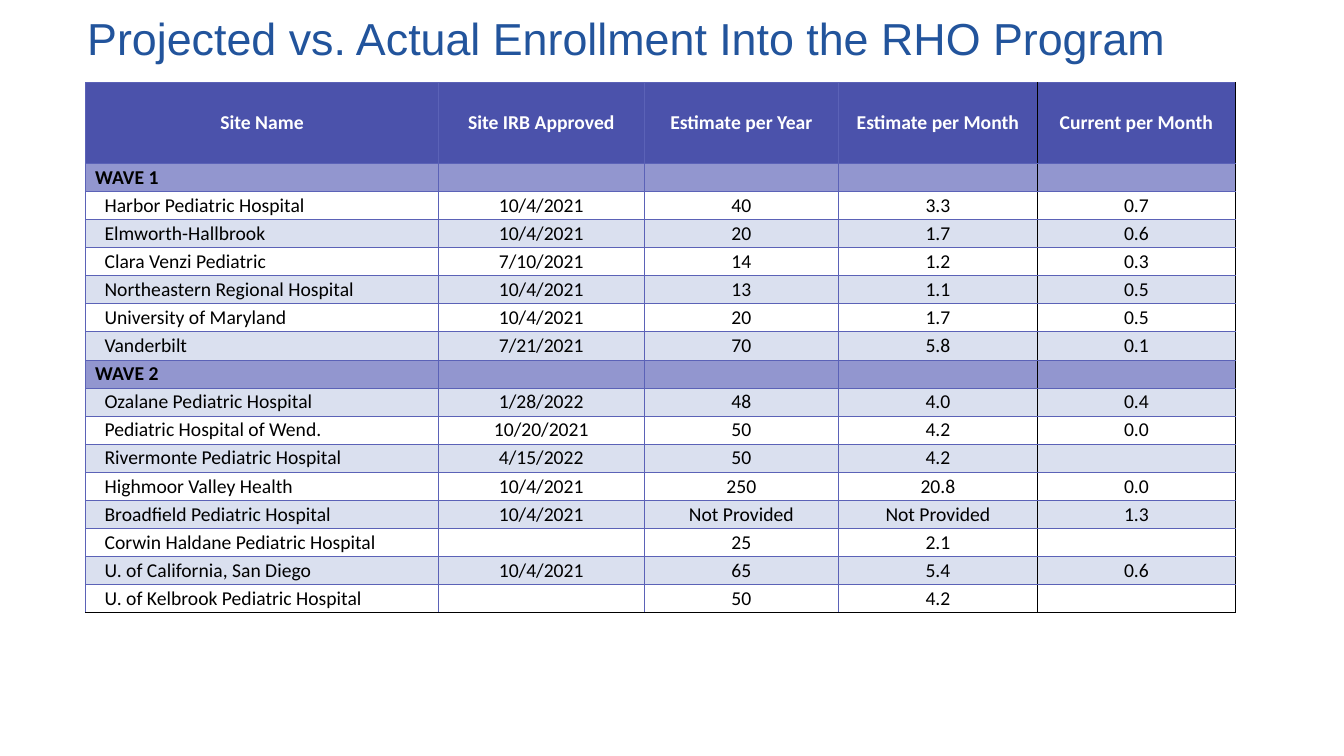
from lxml.etree import SubElement
from pptx import Presentation
from pptx.dml.color import RGBColor
from pptx.enum.text import MSO_ANCHOR, PP_ALIGN
from pptx.oxml.ns import qn
from pptx.util import Pt

BLUE = RGBColor(0x22, 0x54, 0x9C)
INDIGO = RGBColor(0x4B, 0x52, 0xAB)
LILAC = RGBColor(0x92, 0x96, 0xCF)
PALE = RGBColor(0xDA, 0xE0, 0xEF)
EDGE = RGBColor(0x5B, 0x62, 0xB7)
BLACK = RGBColor(0, 0, 0)
WHITE = RGBColor(255, 255, 255)

TITLE = "Projected vs. Actual Enrollment Into the RHO Program"
HEADS = ("Site Name", "Site IRB Approved", "Estimate per Year",
         "Estimate per Month", "Current per Month")
WAVES = {
    "WAVE 1": (
        ("Harbor Pediatric Hospital", "10/4/2021", "40", "3.3", "0.7"),
        ("Elmworth-Hallbrook", "10/4/2021", "20", "1.7", "0.6"),
        ("Clara Venzi Pediatric", "7/10/2021", "14", "1.2", "0.3"),
        ("Northeastern Regional Hospital", "10/4/2021", "13", "1.1", "0.5"),
        ("University of Maryland", "10/4/2021", "20", "1.7", "0.5"),
        ("Vanderbilt", "7/21/2021", "70", "5.8", "0.1"),
    ),
    "WAVE 2": (
        ("Ozalane Pediatric Hospital", "1/28/2022", "48", "4.0", "0.4"),
        ("Pediatric Hospital of Wend.", "10/20/2021", "50", "4.2", "0.0"),
        ("Rivermonte Pediatric Hospital", "4/15/2022", "50", "4.2", ""),
        ("Highmoor Valley Health", "10/4/2021", "250", "20.8", "0.0"),
        ("Broadfield Pediatric Hospital", "10/4/2021",
         "Not Provided", "Not Provided", "1.3"),
        ("Corwin Haldane Pediatric Hospital", "", "25", "2.1", ""),
        ("U. of California, San Diego", "10/4/2021", "65", "5.4", "0.6"),
        ("U. of Kelbrook Pediatric Hospital", "", "50", "4.2", ""),
    ),
}
WIDTHS = (252, 146.9, 139, 141.8, 141.8)
HEAD_H = 57.6
ROW_H = 20.07
SIZE = 14


def apply(item, **vals):
    for key, val in vals.items():
        setattr(item, key, val)


def write(para, text, color, **form):
    run = para.add_run()
    run.text = text
    apply(run.font, **form)
    run.font.color.rgb = color


def add_title(slide):
    box = slide.shapes.add_textbox(Pt(46.8), Pt(0), Pt(802), Pt(59))
    apply(box.text_frame, word_wrap=True, vertical_anchor=MSO_ANCHOR.MIDDLE)
    para = box.text_frame.paragraphs[0]
    apply(para, alignment=PP_ALIGN.CENTER, line_spacing=0.9)
    write(para, TITLE, BLUE, name="Arial", size=Pt(32))


def add_edges(cell, colors):
    props = cell._tc.get_or_add_tcPr()
    for side, color in colors.items():
        line = SubElement(props, qn(f"a:ln{side}"), w=str(Pt(0.5)))
        fill = SubElement(line, qn("a:solidFill"))
        SubElement(fill, qn("a:srgbClr"), val=str(color))


def fill_cell(cell, text, ink, fill, bold, left, center):
    apply(cell, margin_left=Pt(left), margin_right=0, margin_top=0,
          margin_bottom=0, vertical_anchor=MSO_ANCHOR.MIDDLE)
    para = cell.text_frame.paragraphs[0]
    para.alignment = PP_ALIGN.CENTER if center else PP_ALIGN.LEFT
    if text:
        write(para, text, ink, name="Calibri", size=Pt(SIZE), bold=bold)
    else:
        SubElement(para._p, qn("a:endParaRPr"), sz=str(SIZE * 100))
    if fill is None:
        cell.fill.background()
    else:
        cell.fill.solid()
        cell.fill.fore_color.rgb = fill


def add_grid(slide):
    rows = [HEADS]
    for wave, sites in WAVES.items():
        rows += [(wave, "", "", "", ""), *sites]
    last = len(rows) - 1
    frame = slide.shapes.add_table(
        len(rows), len(HEADS), Pt(61.2), Pt(59),
        Pt(sum(WIDTHS)), Pt(HEAD_H + ROW_H * last))
    table = frame.table
    apply(table, first_row=False, horz_banding=False)
    for col, width in zip(table.columns, WIDTHS):
        col.width = Pt(width)
    for r, row in enumerate(rows):
        head, wave = r == 0, row[0] in WAVES
        table.rows[r].height = Pt(HEAD_H if head else ROW_H)
        fill = INDIGO if head else LILAC if wave else PALE if r % 2 else None
        for c, text in enumerate(row):
            cell = table.cell(r, c)
            name = c == 0 and not head
            left = (6.75 if wave else 13.5) if name else 0
            add_edges(cell, {
                "L": BLACK if c == 4 else EDGE,
                "R": BLACK if c >= 3 else EDGE,
                "T": EDGE,
                "B": BLACK if r == last else EDGE,
            })
            fill_cell(cell, text, WHITE if head else BLACK, fill,
                      head or wave, left, not name)


def main():
    deck = Presentation()
    apply(deck, slide_width=Pt(960), slide_height=Pt(540))
    slide = deck.slides.add_slide(deck.slide_layouts[6])
    add_title(slide)
    add_grid(slide)
    deck.save("out.pptx")


if __name__ == "__main__":
    main()
